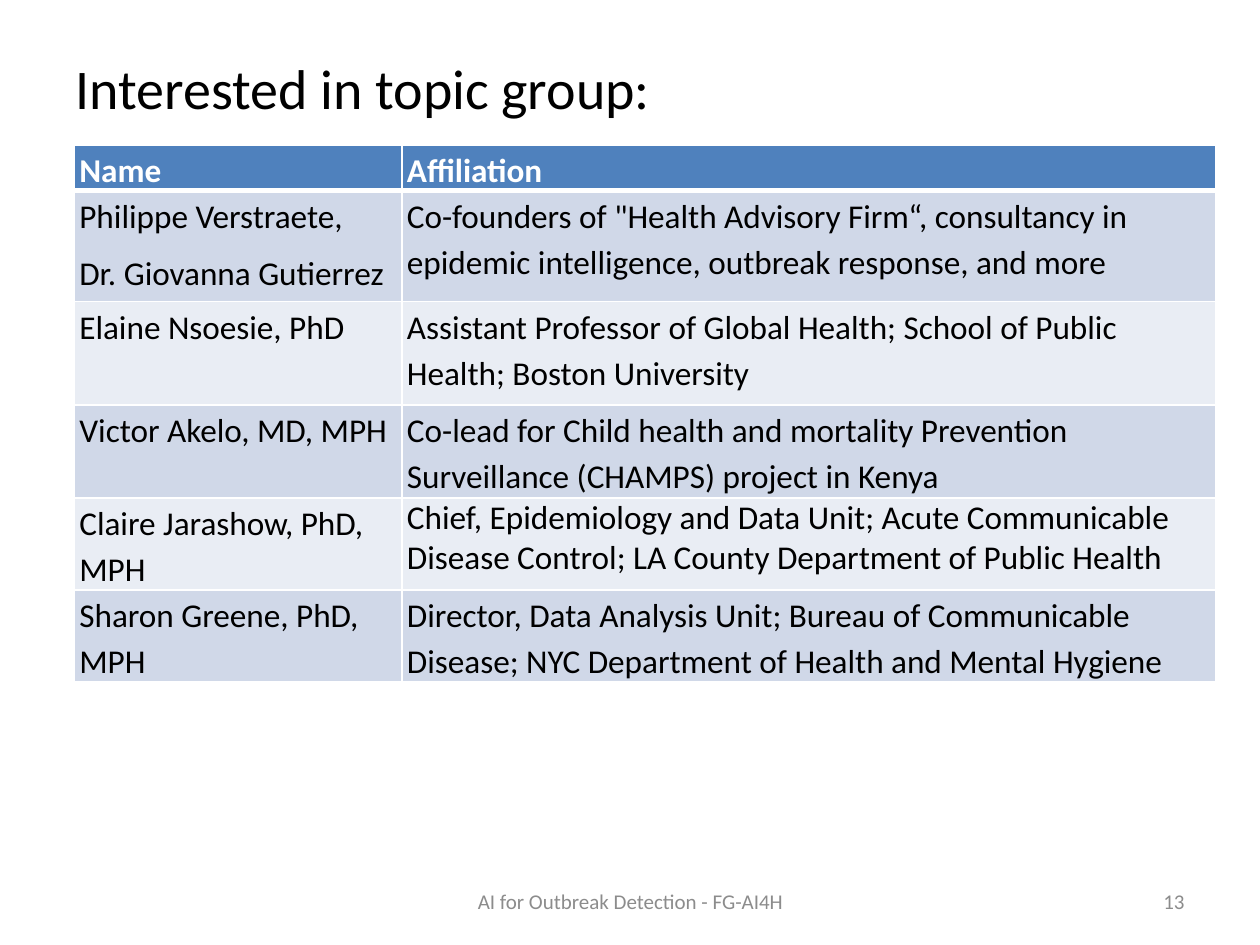
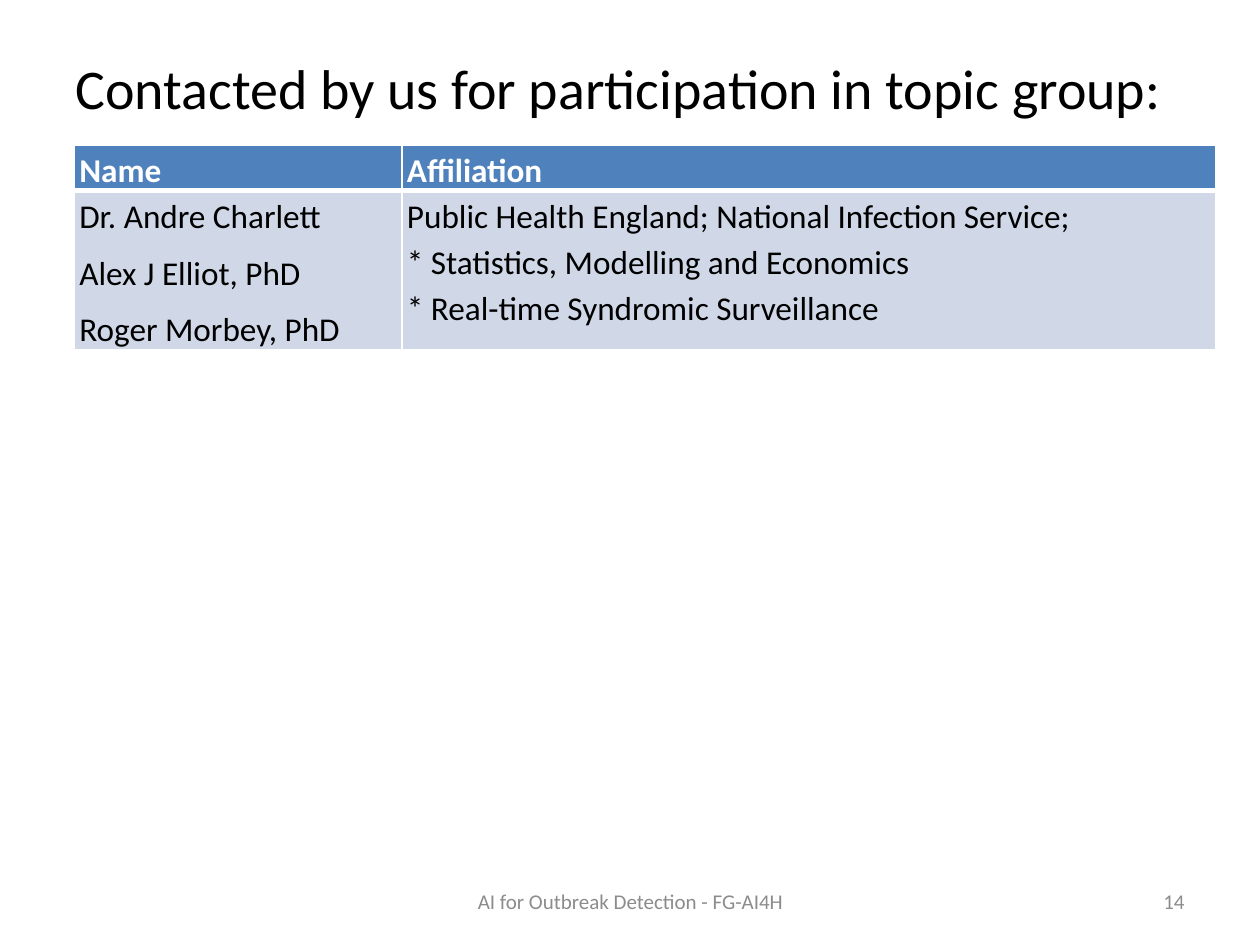
from lxml import etree
from pptx import Presentation
from pptx.dml.color import RGBColor
from pptx.enum import text
from pptx.oxml import ns
from pptx.util import Inches, Pt

FONT = "Calibri"
BLACK = RGBColor(0x00, 0x00, 0x00)
WHITE = RGBColor(0xFF, 0xFF, 0xFF)
GREY = RGBColor(0x8C, 0x8C, 0x8C)
HEADER_BLUE = RGBColor(0x4F, 0x81, 0xBD)
BANDS = (RGBColor(0xD0, 0xD8, 0xE8), RGBColor(0xE9, 0xED, 0xF4))

FOOTER = "AI for Outbreak Detection - FG-AI4H"
FIRST_PAGE_NUMBER = 13
HEADER = ("Name", "Affiliation")
HEADER_HEIGHT = 0.36
COLUMN_WIDTHS = (2.6, 6.46)
TABLE_LEFT, TABLE_TOP = 0.59, 1.15
LINE_SPACING = 1.15

# Each row: names, affiliation, row height, line spacing of the affiliation
PAGES = [
    ("Interested in topic group:", [
        (["Philippe Verstraete,", "Dr. Giovanna Gutierrez"],
         "Co-founders of \"Health Advisory Firm“, consultancy in epidemic "
         "intelligence, outbreak response, and more", 0.88, LINE_SPACING),
        (["Elaine Nsoesie, PhD"],
         "Assistant Professor of Global Health; School of Public Health; "
         "Boston University", 0.82, LINE_SPACING),
        (["Victor Akelo, MD, MPH"],
         "Co-lead for Child health and mortality Prevention Surveillance "
         "(CHAMPS) project in Kenya", 0.74, LINE_SPACING),
        (["Claire Jarashow, PhD, MPH"],
         "Chief, Epidemiology and Data Unit; Acute Communicable Disease "
         "Control; LA County Department of Public Health", 0.73, 1.0),
        (["Sharon Greene, PhD, MPH"],
         "Director, Data Analysis Unit; Bureau of Communicable Disease; "
         "NYC Department of Health and Mental Hygiene", 0.73, LINE_SPACING),
    ]),
    ("Contacted by us for participation in topic group:", [
        (["Dr. Andre Charlett", "Alex J Elliot, PhD", "Roger Morbey, PhD"],
         "Public Health England; National Infection Service;\v"
         "* Statistics, Modelling and Economics\v"
         "* Real-time Syndromic Surveillance", 1.25, LINE_SPACING),
    ]),
]


def style_font(para, size, color, bold=False):
    font = para.font
    font.name, font.size, font.bold = FONT, Pt(size), bold
    font.color.rgb = color


def add_label(page, words, place, size, color, align=text.PP_ALIGN.LEFT):
    box = page.shapes.add_textbox(*(Inches(length) for length in place))
    frame = box.text_frame
    frame.word_wrap = True
    frame.vertical_anchor = text.MSO_ANCHOR.MIDDLE
    para = frame.paragraphs[0]
    para.text, para.alignment = words, align
    style_font(para, size, color)


def set_borders(cell, top, bottom):
    """Draw white cell borders; top and bottom are widths in points."""
    properties = cell._tc.get_or_add_tcPr()
    widths = {"a:lnL": 1, "a:lnR": 1, "a:lnT": top, "a:lnB": bottom}
    for index, (tag, width) in enumerate(widths.items()):
        line = etree.Element(ns.qn(tag), w=str(Pt(width)))
        fill = etree.SubElement(line, ns.qn("a:solidFill"))
        etree.SubElement(fill, ns.qn("a:srgbClr"), val=str(WHITE))
        properties.insert(index, line)


def fill_cell(cell, lines, fill, color, spacing=LINE_SPACING, bold=False):
    cell.margin_left = cell.margin_right = Inches(0.04)
    cell.margin_top = cell.margin_bottom = 0
    cell.fill.solid()
    cell.fill.fore_color.rgb = fill
    frame = cell.text_frame
    for index, words in enumerate(lines):
        para = frame.add_paragraph() if index else frame.paragraphs[0]
        para.text = words
        para.line_spacing, para.space_after = spacing, Pt(6)
        style_font(para, 19, color, bold)


def add_people_table(page, people):
    heights = [HEADER_HEIGHT] + [person[2] for person in people]
    table = page.shapes.add_table(
        len(heights), len(COLUMN_WIDTHS), Inches(TABLE_LEFT), Inches(TABLE_TOP),
        Inches(sum(COLUMN_WIDTHS)), Inches(sum(heights))).table
    for column, width in zip(table.columns, COLUMN_WIDTHS):
        column.width = Inches(width)
    for row, height in zip(table.rows, heights):
        row.height = Inches(height)

    for column, heading in enumerate(HEADER):
        cell = table.cell(0, column)
        fill_cell(cell, [heading], HEADER_BLUE, WHITE, bold=True)
        set_borders(cell, top=1, bottom=3)
    for index, (names, affiliation, _, spacing) in enumerate(people):
        band = BANDS[index % len(BANDS)]
        name_cell, affiliation_cell = table.rows[index + 1].cells
        fill_cell(name_cell, names, band, BLACK)
        fill_cell(affiliation_cell, [affiliation], band, BLACK, spacing)
        for cell in (name_cell, affiliation_cell):
            set_borders(cell, top=1 if index else 3, bottom=1)


def main():
    deck = Presentation()
    deck.slide_width, deck.slide_height = Inches(10), Inches(7.5)
    for number, (title, people) in enumerate(PAGES, FIRST_PAGE_NUMBER):
        page = deck.slides.add_slide(deck.slide_layouts[6])
        add_label(page, title, (0.5, 0.3, 9, 0.79), 32, BLACK)
        add_people_table(page, people)
        add_label(page, FOOTER, (3.42, 6.95, 3.17, 0.4), 12, GREY,
                  text.PP_ALIGN.CENTER)
        add_label(page, str(number), (7.17, 6.95, 2.33, 0.4), 12, GREY,
                  text.PP_ALIGN.RIGHT)
    deck.save("out.pptx")


if __name__ == "__main__":
    main()
